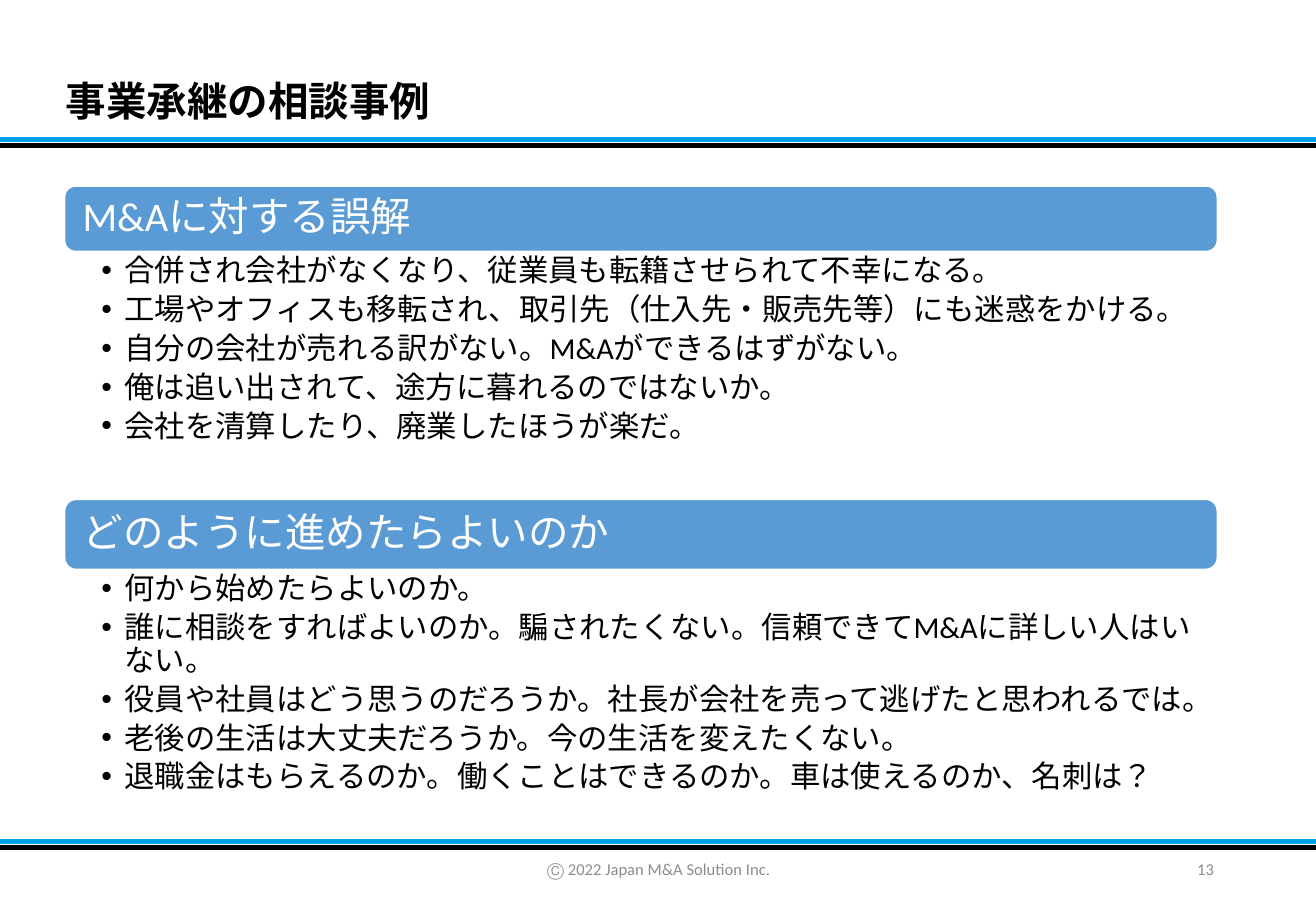
from lxml.etree import SubElement
from pptx import Presentation
from pptx.dml.color import RGBColor
from pptx.enum.lang import MSO_LANGUAGE_ID as Language
from pptx.enum.shapes import MSO_CONNECTOR as Connector, MSO_SHAPE as Shape
from pptx.enum.text import MSO_ANCHOR as Anchor, MSO_AUTO_SIZE as AutoSize, PP_ALIGN as Align
from pptx.oxml.ns import qn
from pptx.util import Cm, Pt

BLACK = RGBColor(0x00, 0x00, 0x00)
WHITE = RGBColor(0xFF, 0xFF, 0xFF)
GRAY = RGBColor(0x8C, 0x8C, 0x8C)
RULE_BLUE = RGBColor(0x00, 0xA1, 0xE9)
HEADING_BLUE = RGBColor(0x5B, 0x9B, 0xD5)

LATIN_FONT = "Calibri"
JAPANESE_FONT = "Noto Sans CJK JP"
SLIDE_WIDTH, SLIDE_HEIGHT = 27.51, 19.05
SECTION_LEFT, SECTION_WIDTH = 1.35, 24.1

# Each section: top, heading height, list height, heading, list items
SECTIONS = [
    (3.89, 1.37, 5.16, "M&Aに対する誤解", [
        "合併され会社がなくなり、従業員も転籍させられて不幸になる。",
        "工場やオフィスも移転され、取引先（仕入先・販売先等）にも迷惑をかける。",
        "自分の会社が売れる訳がない。M&Aができるはずがない。",
        "俺は追い出されて、途方に暮れるのではないか。",
        "会社を清算したり、廃業したほうが楽だ。",
    ]),
    (10.44, 1.47, 5.44, "どのように進めたらよいのか", [
        "何から始めたらよいのか。",
        "誰に相談をすればよいのか。騙されたくない。信頼できてM&Aに詳しい人はいない。",
        "役員や社員はどう思うのだろうか。社長が会社を売って逃げたと思われるでは。",
        "老後の生活は大丈夫だろうか。今の生活を変えたくない。",
        "退職金はもらえるのか。働くことはできるのか。車は使えるのか、名刺は？",
    ]),
]


def apply_format(target, values):
    for name, value in values.items():
        setattr(target, name, value)


def place(shape, left, top, width, height):
    apply_format(shape, {"left": Cm(left), "top": Cm(top),
                         "width": Cm(width), "height": Cm(height)})


def format_frame(frame, anchor=Anchor.MIDDLE, margins=(0.25, 0.13, 0.25, 0.13)):
    """Margins are left, top, right and bottom in centimetres."""
    left, top, right, bottom = map(Cm, margins)
    apply_format(frame, {"word_wrap": True, "auto_size": AutoSize.NONE,
                         "vertical_anchor": anchor,
                         "margin_left": left, "margin_top": top,
                         "margin_right": right, "margin_bottom": bottom})


def write_paragraph(paragraph, text, size, color, align=Align.LEFT,
                    line_spacing=0.9, space_after=0, bold=False, font_name=LATIN_FONT):
    apply_format(paragraph, {"alignment": align, "line_spacing": line_spacing,
                             "space_before": Pt(0), "space_after": Pt(space_after)})
    run = paragraph.add_run()
    run.text = text
    apply_format(run.font, {"size": Pt(size), "name": font_name, "bold": bold,
                            "language_id": Language.JAPANESE})
    run.font.color.rgb = color
    SubElement(run.font._element, qn("a:ea")).set("typeface", font_name)


def add_rule(slide, top, color):
    rule = slide.shapes.add_connector(Connector.STRAIGHT, Cm(0), Cm(top),
                                      Cm(SLIDE_WIDTH), Cm(top))
    rule.line.color.rgb = color
    rule.line.width = Pt(3)
    SubElement(rule._element.spPr, qn("a:effectLst"))


def add_footer_text(slide, text, left, width, align):
    box = slide.shapes.add_textbox(Cm(left), Cm(17.65), Cm(width), Cm(1.02))
    format_frame(box.text_frame)
    write_paragraph(box.text_frame.paragraphs[0], text, 9.8, GRAY, align, line_spacing=1.0)


def fill_title(title, text):
    place(title, 1.12, 1.57, 20.57, 1.17)
    format_frame(title.text_frame)
    write_paragraph(title.text_frame.paragraphs[0], text, 24, BLACK,
                    bold=True, font_name=JAPANESE_FONT)


def add_heading(slide, text, top, height):
    bar = slide.shapes.add_shape(Shape.ROUNDED_RECTANGLE, Cm(SECTION_LEFT), Cm(top),
                                 Cm(SECTION_WIDTH), Cm(height))
    bar.shadow.inherit = False
    bar.fill.solid()
    bar.fill.fore_color.rgb = HEADING_BLUE
    bar.line.color.rgb = WHITE
    bar.line.width = Pt(1)
    format_frame(bar.text_frame, margins=(0.31, 0.25, 0.31, 0.25))
    write_paragraph(bar.text_frame.paragraphs[0], text, 24, WHITE)
    return bar


def fill_list(body, items, top, height):
    place(body, SECTION_LEFT, top, SECTION_WIDTH, height)
    frame = body.text_frame
    format_frame(frame, Anchor.TOP, (0.77, 0.08, 0.35, 0.08))
    for index, item in enumerate(items):
        paragraph = frame.add_paragraph() if index else frame.paragraphs[0]
        properties = paragraph._p.get_or_add_pPr()
        properties.set("marL", str(Cm(0.48)))
        properties.set("indent", str(-Cm(0.48)))
        write_paragraph(paragraph, item, 18, BLACK, space_after=3.6)


def main():
    presentation = Presentation()
    presentation.slide_width = Cm(SLIDE_WIDTH)
    presentation.slide_height = Cm(SLIDE_HEIGHT)
    two_content_layout = presentation.slide_layouts[3]
    slide = presentation.slides.add_slide(two_content_layout)
    title, *bodies = slide.placeholders

    for top in (2.92, 17.6):
        add_rule(slide, top, RULE_BLUE)
        add_rule(slide, top + 0.13, BLACK)

    fill_title(title, "事業承継の相談事例")
    for body, (top, heading_height, list_height, heading, items) in zip(bodies, SECTIONS):
        bar = add_heading(slide, heading, top, heading_height)
        fill_list(body, items, top + heading_height, list_height)
        body._element.addprevious(bar._element)  # heading is read before its list

    add_footer_text(slide, "Ⓒ 2022 Japan M&A Solution Inc.", 9.12, 9.3, Align.CENTER)
    add_footer_text(slide, "13", 19.43, 6.2, Align.RIGHT)
    presentation.save("out.pptx")


if __name__ == "__main__":
    main()
